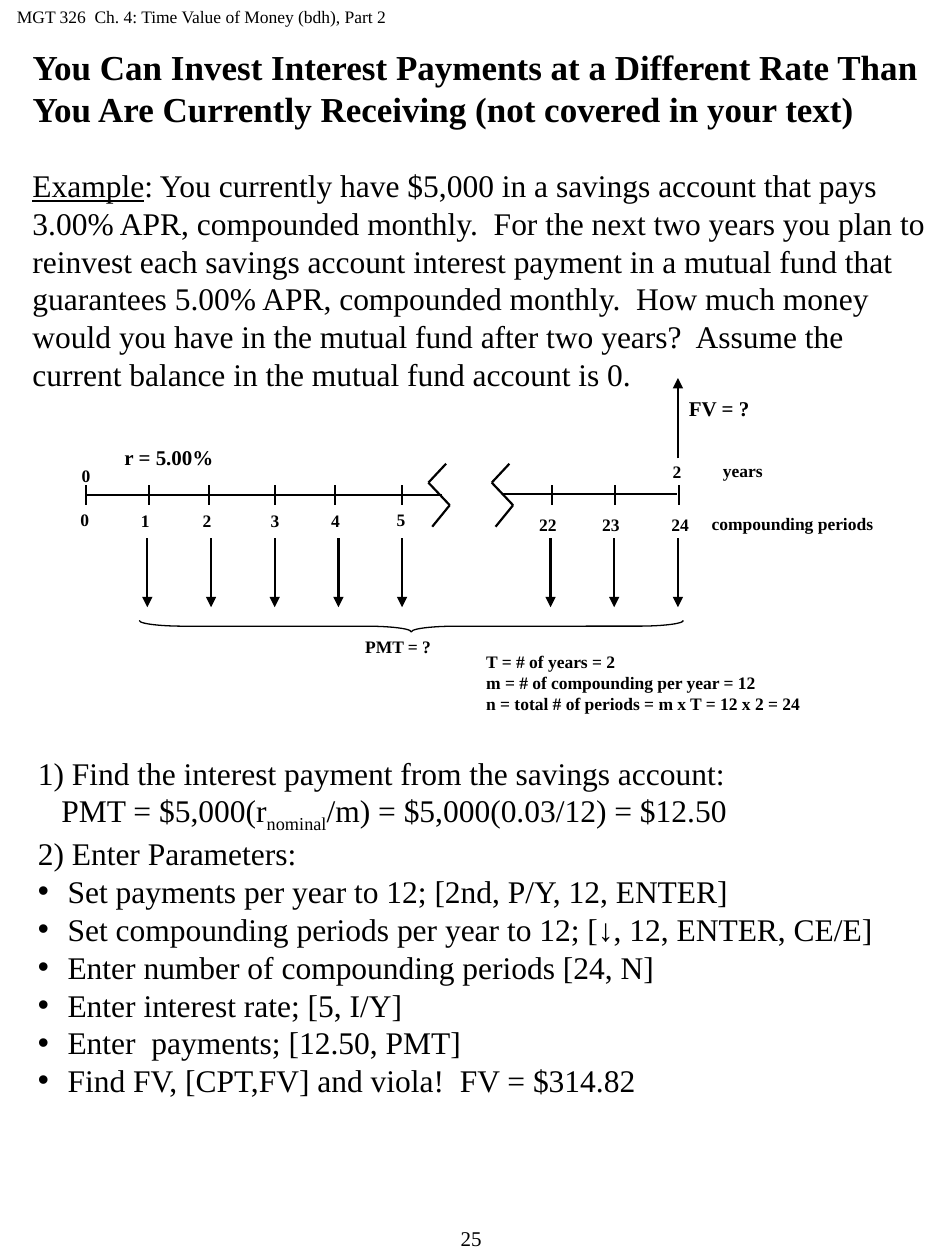
from lxml import etree
from pptx import Presentation
from pptx.dml.color import RGBColor
from pptx.enum.shapes import MSO_CONNECTOR, MSO_SHAPE
from pptx.enum.text import MSO_ANCHOR, MSO_AUTO_SIZE, PP_ALIGN
from pptx.oxml.ns import qn
from pptx.util import Pt

STRAIGHT = MSO_CONNECTOR.STRAIGHT
LEFT_BRACE = MSO_SHAPE.LEFT_BRACE
TOP = MSO_ANCHOR.TOP
NO_FIT = MSO_AUTO_SIZE.NONE
LEFT, CENTER = PP_ALIGN.LEFT, PP_ALIGN.CENTER
BLACK = RGBColor(0x00, 0x00, 0x00)
FONT = "Times New Roman"

# Content
HEADER = "MGT 326  Ch. 4: Time Value of Money (bdh), Part 2"
PAGE_NUMBER = "25"
TITLE = ("You Can Invest Interest Payments at a Different Rate Than "
         "You Are Currently Receiving (not covered in your text)")
EXAMPLE = [
    ("Example", "underline"),
    (": You currently have $5,000 in a savings account that pays 3.00% APR, "
     "compounded monthly.  For the next two years you plan to reinvest each "
     "savings account interest payment in a mutual fund that guarantees 5.00% "
     "APR, compounded monthly.  How much money would you have in the mutual "
     "fund after two years?  Assume the current balance in the mutual fund "
     "account is 0.", None),
]
# Each step: runs, left margin, bullet
STEPS = [
    ([("1) Find the interest payment from the savings account:", None)], 0, False),
    ([("PMT = $5,000(r", None), ("nominal", "subscript"),
      ("/m) = $5,000(0.03/12) = $12.50", None)], 13.5, False),
    ([("2) Enter Parameters:", None)], 0, False),
] + [([(text, None)], 17, True) for text in (
    "Set payments per year to 12; [2nd, P/Y, 12, ENTER]",
    "Set compounding periods per year to 12; [↓, 12, ENTER, CE/E]",
    "Enter number of compounding periods [24, N]",
    "Enter interest rate; [5, I/Y]",
    "Enter  payments; [12.50, PMT]",
    "Find FV, [CPT,FV] and viola!  FV = $314.82",
)]
DEFINITIONS = ["T = # of years = 2", "m = # of compounding per year = 12",
               "n = total # of periods = m x T = 12 x 2 = 24"]
# Period label, tick x, label left, label top
PERIODS = [
    ("0", 49, 38.9, 287.5), ("1", 85, 73.4, 288), ("2", 119.5, 108.7, 288),
    ("3", 157, 147.6, 288), ("4", 191.5, 182.2, 288), ("5", 229.7, 219.6, 287.5),
    ("22", 315.4, 301, 290), ("23", 351.4, 337, 290), ("24", 388, 376.6, 290),
]
# Text, left, top, width, size
LABELS = [
    ("0", 39.6, 262, 19.4, 10), ("2", 377.3, 260, 19.4, 10),
    ("years", 406, 259.2, 37.4, 10), ("compounding periods", 399.6, 289.5, 106.6, 10),
    ("r = 5.00%", 64, 250.5, 66.2, 12), ("FV = ?", 386.6, 222.5, 49.7, 12),
    ("PMT = ?", 201.6, 360, 52.6, 10),
]
AXES = [(49, 283, 252.7), (286.6, 282.2, 386.6)]
ARROW_GROUPS = [(84.2, 5), (314.6, 3)]
ARROW_GAP = 36.4
BREAK_POINTS = [(254.9, 265), (244.8, 275.8), (257, 288.7), (247, 301)]
BREAK_SHIFTS = (0, 36.2)

presentation = Presentation()
presentation.slide_width, presentation.slide_height = Pt(540), Pt(720)
slide = presentation.slides.add_slide(presentation.slide_layouts[1])
shapes = slide.shapes


def style(paragraph, size, bold=False, align=LEFT):
    font = paragraph.font
    font.name, font.size, font.bold = FONT, Pt(size), bold
    font.color.rgb = BLACK
    paragraph.alignment = align
    paragraph.space_before = Pt(0)


def add_runs(paragraph, runs):
    for text, effect in runs:
        run = paragraph.add_run()
        run.text = text
        if effect == "underline":
            run.font.underline = True
        elif effect == "subscript":
            run._r.get_or_add_rPr().set("baseline", "-25000")


def set_indent(paragraph, margin, bullet=False):
    properties = paragraph._p.get_or_add_pPr()
    properties.set("marL", str(Pt(margin)))
    properties.set("indent", str(-Pt(margin) if bullet else 0))
    if bullet:
        etree.SubElement(properties, qn("a:buFont")).set("typeface", "Arial")
        etree.SubElement(properties, qn("a:buChar")).set("char", "•")
    else:
        etree.SubElement(properties, qn("a:buNone"))


def place(shape, left, top, width, height):
    shape.left, shape.top = Pt(left), Pt(top)
    shape.width, shape.height = Pt(width), Pt(height)
    frame = shape.text_frame
    frame.word_wrap, frame.auto_size, frame.vertical_anchor = True, NO_FIT, TOP
    return frame


def add_text(lines, left, top, width, height, size, bold=False, align=LEFT, wrap=True):
    frame = shapes.add_textbox(Pt(left), Pt(top), Pt(width), Pt(height)).text_frame
    frame.word_wrap = wrap
    frame.text = "\n".join(lines)
    for paragraph in frame.paragraphs:
        style(paragraph, size, bold, align)
    return frame


def add_line(start, end, arrow=False):
    line = shapes.add_connector(STRAIGHT, *(Pt(value) for value in (*start, *end)))
    line.line.color.rgb = BLACK
    line.line.width = Pt(1.25)
    if arrow:
        etree.SubElement(line.line._get_or_add_ln(), qn("a:tailEnd")).set("type", "triangle")
    etree.SubElement(line._element.spPr, qn("a:effectLst"))


# Header, title, example and page number
header = add_text([HEADER], 0, 0, 270, 21, 10)
header.margin_left = Pt(9.7)
title = place(shapes.title, 11.5, 22.3, 528.5, 54)
title.text = TITLE
style(title.paragraphs[0], 20, bold=True)
example = add_text([""], 11.5, 91.3, 528.5, 140, 18).paragraphs[0]
add_runs(example, EXAMPLE)
add_text([PAGE_NUMBER], 234.7, 697, 69, 23, 12, align=CENTER)

# Timeline: axes, ticks and breaks
for start_x, y, end_x in AXES:
    add_line((start_x, y), (end_x, y))
for text, tick_x, left, top in PERIODS:
    add_line((tick_x, 277.2), (tick_x, 288.7))
    add_text([text], left, top, 14.4 + 5 * len(text), 19.4, 10, bold=True, wrap=False)
for shift in BREAK_SHIFTS:
    points = [(x + shift, y) for x, y in BREAK_POINTS]
    for start, end in zip(points, points[1:]):
        add_line(start, end)

# Payment arrows, future value arrow and brace
for first_x, count in ARROW_GROUPS:
    for index in range(count):
        x = first_x + index * ARROW_GAP
        add_line((x, 307.5), (x, 347), arrow=True)
add_line((387.4, 262), (387.4, 216), arrow=True)
brace = shapes.add_shape(LEFT_BRACE, Pt(231.8), Pt(202.3), Pt(6.5), Pt(311))
brace.rotation = 270
brace.adjustments[0] = 3.987
brace.shadow.inherit = False
brace.fill.background()
brace.line.color.rgb = BLACK
brace.line.width = Pt(0.75)

# Timeline labels and definitions
for text, left, top, width, size in LABELS:
    add_text([text], left, top, width, size * 1.2 + 7.4, size, bold=True, wrap=False)
add_text(DEFINITIONS, 270.7, 368.6, 231, 43, 10, bold=True)

# Solution steps
body = place(slide.placeholders[1], 14.4, 427, 525.6, 245)
for index, (runs, margin, bullet) in enumerate(STEPS):
    paragraph = body.add_paragraph() if index else body.paragraphs[0]
    style(paragraph, 18)
    # Bullet elements must precede the default run properties
    properties = paragraph._p.get_or_add_pPr()
    defaults = properties.find(qn("a:defRPr"))
    set_indent(paragraph, margin, bullet)
    properties.append(defaults)
    add_runs(paragraph, runs)

presentation.save("out.pptx")
